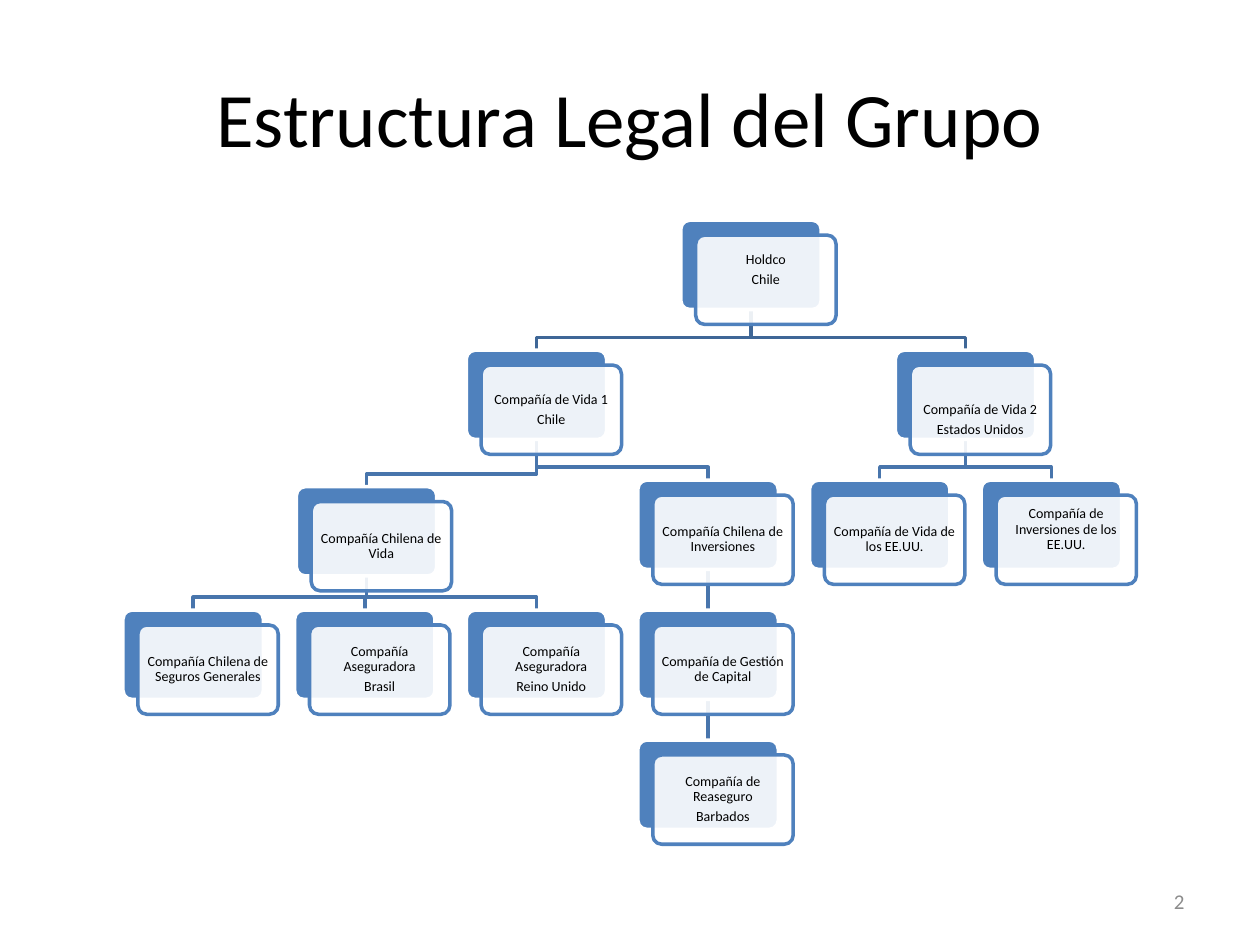
from dataclasses import dataclass

from lxml import etree
from pptx import Presentation
from pptx.dml.color import RGBColor
from pptx.enum.shapes import MSO_CONNECTOR, MSO_SHAPE
from pptx.enum.text import MSO_ANCHOR, PP_ALIGN
from pptx.oxml.ns import qn
from pptx.util import Cm, Pt

CENTER, RIGHT = PP_ALIGN.CENTER, PP_ALIGN.RIGHT
MIDDLE = MSO_ANCHOR.MIDDLE
ROUND = MSO_SHAPE.ROUNDED_RECTANGLE
STRAIGHT = MSO_CONNECTOR.STRAIGHT


@dataclass(frozen=True)
class Theme:
    font: str = "Calibri"
    black: str = "000000"
    white: str = "FFFFFF"
    blue: str = "4F81BD"
    grey: str = "8C8C8C"
    link: str = "4875AC"
    top_link: str = "3F6797"
    title: int = 44
    label: int = 8
    number: int = 12
    line: int = 2


theme = Theme()


def write(shape, text, size, color=theme.black, align=CENTER,
          inset=(0.25, 0.13, 0.25, 0.13), spacing=1, after=0):
    """Fill a shape with text, one paragraph a line; inset is left, top, right, bottom in cm."""
    frame = shape.text_frame
    frame.word_wrap = True
    frame.vertical_anchor = MIDDLE
    (frame.margin_left, frame.margin_top,
     frame.margin_right, frame.margin_bottom) = map(Cm, inset)
    frame.text = text
    for para in frame.paragraphs:
        para.alignment = align
        para.line_spacing = spacing
        para.space_after = Pt(after)
        font = para.runs[0].font
        font.name, font.size = theme.font, Pt(size)
        font.color.rgb = RGBColor.from_string(color)


def paint(shape, line, fill=None):
    shape.line.color.rgb = RGBColor.from_string(line)
    shape.line.width = Pt(theme.line)
    if fill:
        shape.fill.solid()
        shape.fill.fore_color.rgb = RGBColor.from_string(fill)


deck = Presentation()
deck.slide_width, deck.slide_height = Cm(25.4), Cm(19.05)
slide = deck.slides.add_slide(deck.slide_layouts[6])
shapes = slide.shapes

title = shapes.add_textbox(Cm(1.27), Cm(0.76), Cm(22.86), Cm(3.18))
write(title, "Estructura Legal del Grupo", theme.title)

# Grid of the chart, in cm
LEFT, TOP = 2.48, 4.44
STEP_X, STEP_Y = 3.46, 2.62
WIDE, HIGH = 2.83, 1.8
SHIFT = 0.3
BEND = 0.26
PAD, ROW = 0.08, 0.41

# key: (column, row, parent, text, extra top inset, extra bottom inset)
nodes = {
    "holdco": (3.25, 0, None, "Holdco\nChile", 0, ROW),
    "life1": (2, 1, "holdco", "Compañía de Vida 1\nChile", 0, 0),
    "life": (1.01, 2.05, "life1", "Compañía Chilena de Vida", 0, 0),
    "general": (0, 3, "life", "Compañía Chilena de Seguros Generales", 0, 0),
    "brazil": (1, 3, "life", "Compañía Aseguradora\nBrasil", 0, 0),
    "britain": (2, 3, "life", "Compañía Aseguradora\nReino Unido", 0, 0),
    "invest": (3, 2, "life1", "Compañía Chilena de Inversiones", 0, 0),
    "capital": (3, 3, "invest", "Compañía de Gestión de Capital", 0, 0),
    "reinsure": (3, 4, "capital", "Compañía de Reaseguro\nBarbados", 0, 0),
    "life2": (4.5, 1, "holdco", "Compañía de Vida 2\nEstados Unidos", ROW, 0),
    "us_life": (4, 2, "life2", "Compañía de Vida de los EE.UU.", 0, 0),
    "us_invest": (5, 2, "life2", "Compañía de Inversiones de los EE.UU.", 0, ROW),
}
spots = {key: (LEFT + STEP_X * col, TOP + STEP_Y * row)
         for key, (col, row, *_) in nodes.items()}

# Links lie behind the cards
for key, (_, _, boss, *_) in nodes.items():
    if not boss:
        continue
    x1, y1 = spots[boss][0] + WIDE / 2, spots[boss][1] + HIGH
    x2, y2 = spots[key][0] + WIDE / 2, spots[key][1]
    if x1 == x2:
        link = shapes.add_connector(STRAIGHT, Cm(x1), Cm(y1), Cm(x2), Cm(y2))
        etree.SubElement(link._element.spPr, qn("a:effectLst"))
    else:
        pen = shapes.build_freeform(Cm(x1), Cm(y1))
        turns = [(x1, y2 - BEND), (x2, y2 - BEND), (x2, y2)]
        pen.add_line_segments([(Cm(x), Cm(y)) for x, y in turns], close=False)
        link = pen.convert_to_shape()
        link.fill.background()
        link.shadow.inherit = False
    paint(link, theme.top_link if boss == "holdco" else theme.link)

for key, (_, _, _, text, above, below) in nodes.items():
    x, y = spots[key]
    looks = ((0, theme.white, theme.blue), (SHIFT, theme.blue, theme.white))
    for move, line, fill in looks:
        card = shapes.add_shape(ROUND, Cm(x + move), Cm(y + move), Cm(WIDE), Cm(HIGH))
        card.adjustments[0] = 0.1
        card.shadow.inherit = False
        paint(card, line, fill)
    # The front card lets the back one show through
    tint = card._element.spPr.find(qn("a:solidFill"))[0]
    etree.SubElement(tint, qn("a:alpha"), val="90000")
    write(card, text, theme.label, inset=(PAD, PAD + above, PAD, PAD + below),
          spacing=0.9, after=2.8)

number = shapes.add_textbox(Cm(18.2), Cm(17.66), Cm(5.93), Cm(1.01))
write(number, "2", theme.number, color=theme.grey, align=RIGHT)

deck.save("out.pptx")
